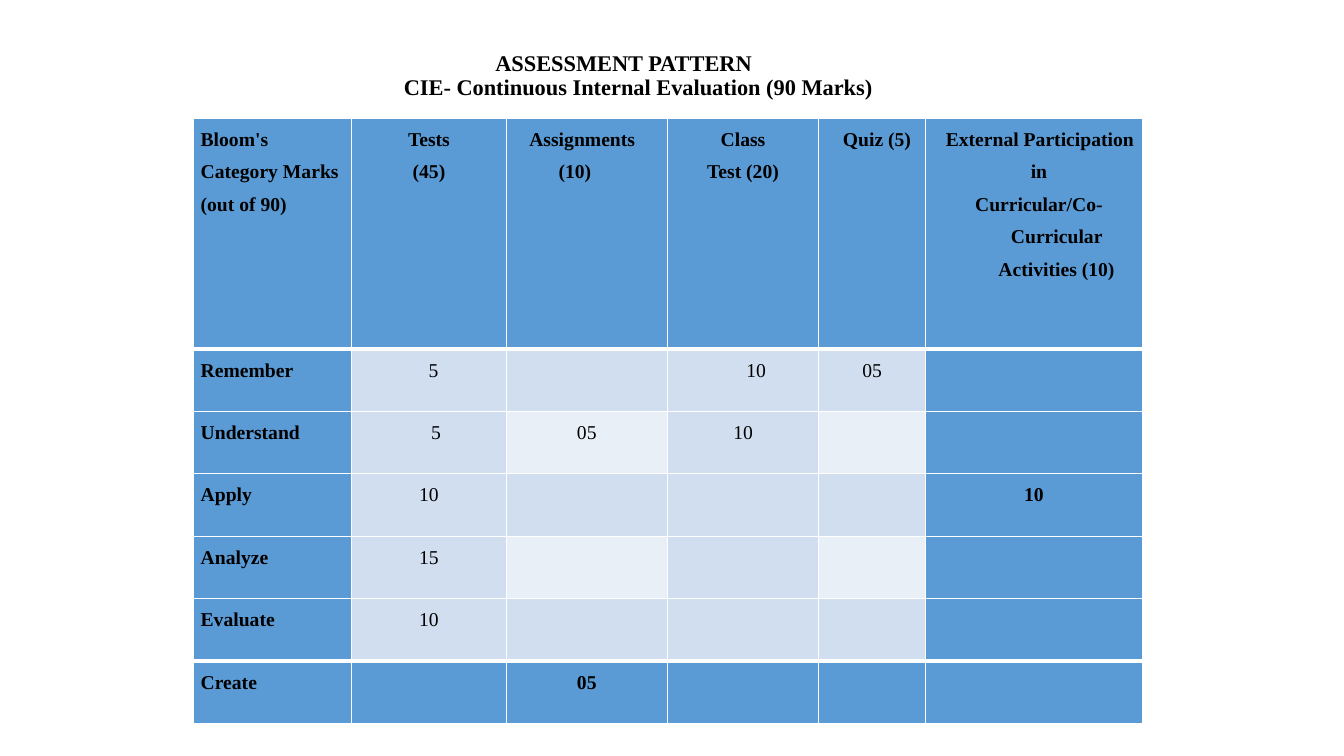
import pptx
import pptx.util
import pptx.dml.color
import pptx.enum.text
import pptx.oxml.ns
import lxml.etree

Inches, Pt = pptx.util.Inches, pptx.util.Pt
ALIGN = pptx.enum.text.PP_ALIGN
FONT = "Times New Roman"
BLUE, MID, PALE, WHITE, BLACK = "5B9BD5", "D0DEEF", "E9EFF7", "FFFFFF", "000000"

COLUMNS = [1.57, 1.53, 1.6, 1.5, 1.06, 2.15]
ROWS = [2.29] + [0.62] * 6

# Each header paragraph: text, alignment, left margin, first-line indent, right margin
HEADERS = [
    [("Bloom's Category Marks (out of 90)", ALIGN.LEFT, 0.07, 0, 0.1)],
    [("Tests (45)", ALIGN.CENTER, 0.38, 0, 0.38)],
    [("Assignments (10)", ALIGN.LEFT, 0.52, -0.29, 0)],
    [("Class", ALIGN.CENTER, 0, 0, 0), ("Test (20)", ALIGN.CENTER, 0, 0, 0)],
    [("Quiz (5)", ALIGN.LEFT, 0.37, -0.13, 0)],
    [("External Participation in", ALIGN.CENTER, 0.1, 0.02, 0),
     ("Curricular/Co-Curricular Activities (10)", ALIGN.CENTER, 0.45, -0.35, 0)],
]
MARKS = [
    ["Remember", "5", "", "10", "05", ""],
    ["Understand", "5", "05", "10", "", ""],
    ["Apply", "10", "", "", "", "10"],
    ["Analyze", "15", "", "", "", ""],
    ["Evaluate", "10", "", "", "", ""],
    ["Create", "", "05", "", "", ""],
]
# Marks set off from the cell centre, by row and column: left margin
OFFSETS = {(1, 1): 0.09, (2, 1): 0.14, (1, 3): 0.26}


def rgb(color):
    return pptx.dml.color.RGBColor.from_string(color)


def add_run(p, text, size, bold):
    r = p.add_run()
    r.text = text
    r.font.name, r.font.size, r.font.bold = FONT, Pt(size), bold
    r.font.color.rgb = rgb(BLACK)


def set_indent(p, left, first=0, right=0):
    pPr = p._p.get_or_add_pPr()
    for name, value in (("marL", left), ("indent", first), ("marR", right)):
        pPr.set(name, str(Inches(value)))


def set_borders(cell, top, bottom):
    tcPr = cell._tc.get_or_add_tcPr()
    qn = pptx.oxml.ns.qn
    widths = (("a:lnL", 1), ("a:lnR", 1), ("a:lnT", top), ("a:lnB", bottom))
    for i, (tag, width) in enumerate(widths):
        ln = lxml.etree.Element(qn(tag), w=str(Pt(width)))
        fill = lxml.etree.SubElement(ln, qn("a:solidFill"))
        lxml.etree.SubElement(fill, qn("a:srgbClr"), val=WHITE)
        tcPr.insert(i, ln)


def cell_color(row, col):
    if row in (0, len(ROWS) - 1) or col in (0, len(COLUMNS) - 1):
        return BLUE
    return PALE if row % 2 == 0 and col % 2 == 0 else MID


def cell_paragraphs(row, col):
    if row == 0:
        return HEADERS[col]
    text = MARKS[row - 1][col]
    if not text:
        return []
    if col == 0:
        return [(text, ALIGN.LEFT, 0.07, 0, 0)]
    return [(text, ALIGN.CENTER, OFFSETS.get((row, col), 0), 0, 0)]


def fill_cell(cell, row, col):
    color = cell_color(row, col)
    cell.fill.solid()
    cell.fill.fore_color.rgb = rgb(color)
    cell.margin_left = cell.margin_right = cell.margin_top = cell.margin_bottom = 0
    last = len(ROWS) - 1
    set_borders(cell, 3 if row in (1, last) else 1, 3 if row in (0, last - 1) else 1)
    tf = cell.text_frame
    for i, (text, align, left, first, right) in enumerate(cell_paragraphs(row, col)):
        p = tf.paragraphs[0] if i == 0 else tf.add_paragraph()
        p.alignment, p.line_spacing = align, 1.5
        set_indent(p, left, first, right)
        add_run(p, text, 14, color == BLUE)


def add_marks_table(s):
    table = s.shapes.add_table(len(ROWS), len(COLUMNS), Inches(1.92), Inches(1.17),
                               Inches(sum(COLUMNS)), Inches(sum(ROWS))).table
    for column, width in zip(table.columns, COLUMNS):
        column.width = Inches(width)
    for row, height in enumerate(ROWS):
        table.rows[row].height = Inches(height)
        for col in range(len(COLUMNS)):
            fill_cell(table.cell(row, col), row, col)


def set_title(s):
    sp = s.shapes.title
    sp.left, sp.top, sp.width, sp.height = map(Inches, (2.67, 0.49, 7, 0.54))
    tf = sp.text_frame
    tf.word_wrap = True
    tf.auto_size = pptx.enum.text.MSO_AUTO_SIZE.SHAPE_TO_FIT_TEXT
    tf.vertical_anchor = pptx.enum.text.MSO_ANCHOR.MIDDLE
    tf.margin_left = tf.margin_right = Inches(0.05)
    tf.margin_top = tf.margin_bottom = Inches(0.03)
    lines = (("ASSESSMENT PATTERN", 0.03),
             ("CIE- Continuous Internal Evaluation (90 Marks)", 0.32))
    for i, (text, left) in enumerate(lines):
        p = tf.paragraphs[0] if i == 0 else tf.add_paragraph()
        p.alignment, p.line_spacing = ALIGN.CENTER, 0.9
        set_indent(p, left)
        add_run(p, text, 16, True)


def main():
    prs = pptx.Presentation()
    prs.slide_width, prs.slide_height = Inches(13.33), Inches(7.5)
    s = prs.slides.add_slide(prs.slide_layouts[5])  # title only
    set_title(s)
    add_marks_table(s)
    prs.save("out.pptx")


if __name__ == "__main__":
    main()
